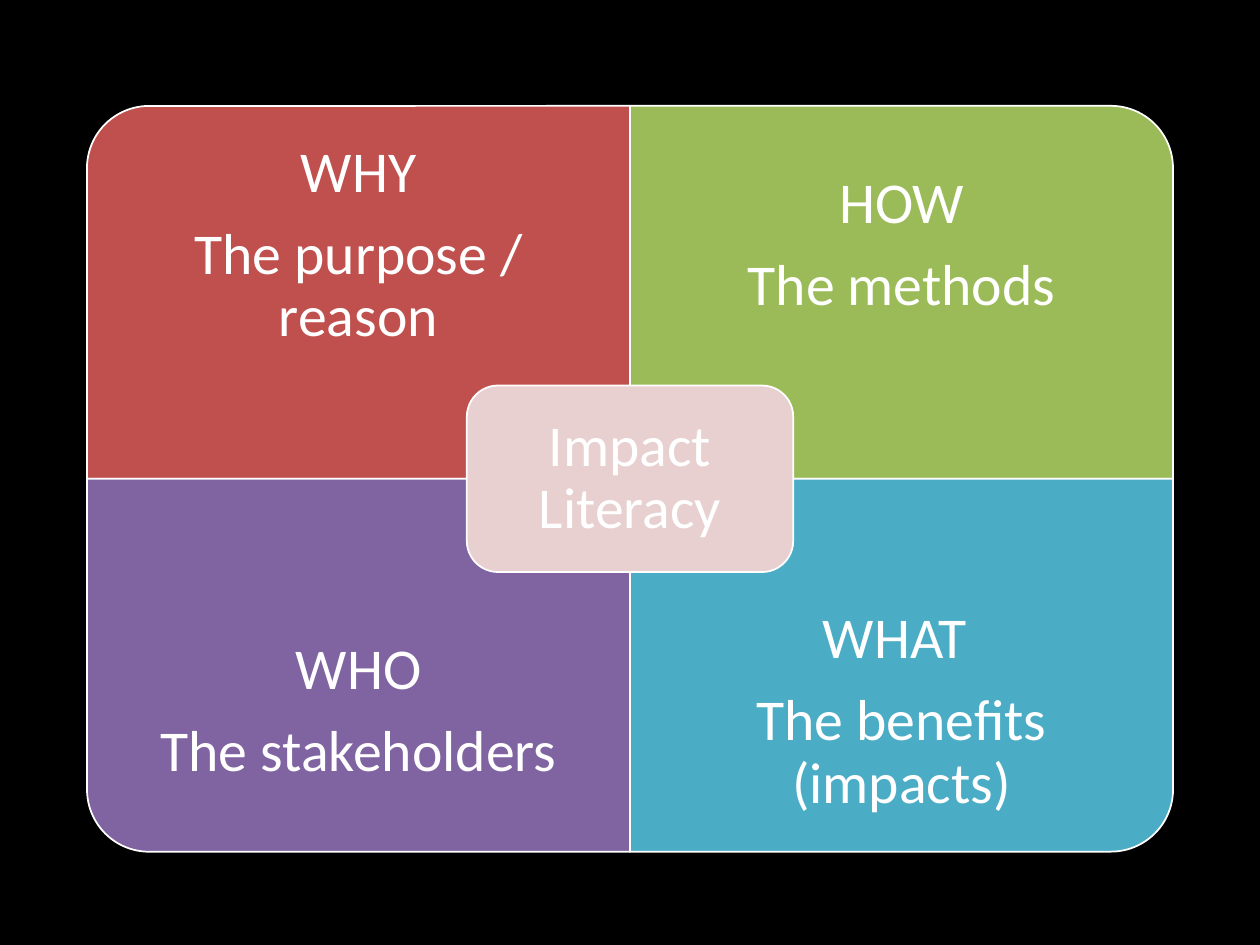
from dataclasses import dataclass

from pptx import Presentation
from pptx.dml.color import RGBColor
from pptx.enum.shapes import MSO_SHAPE as Preset
from pptx.enum.text import MSO_ANCHOR as Anchor, PP_ALIGN as Align
from pptx.util import Inches, Pt

WHITE = "FFFFFF"
CENTRE_X, CENTRE_Y = 5, 3.8
QUADRANT_WIDTH, QUADRANT_HEIGHT = 4.31, 2.96
TEXT_HEIGHT = 2.22
CORE_WIDTH, CORE_HEIGHT = 2.59, 1.48
CORE_PADDING = 0.07


@dataclass
class Quadrant:
    text: str
    colour: str
    column: int
    row: int
    rotation: int


QUADRANTS = [
    Quadrant("WHY\nThe purpose / reason", "C0504D", 0, 0, 270),
    Quadrant("HOW\nThe methods", "9BBB59", 1, 0, 0),
    Quadrant("WHO\nThe stakeholders", "8064A2", 0, 1, 180),
    Quadrant("WHAT \nThe benefits (impacts)", "4BACC6", 1, 1, 90),
]


def rgb(colour: str) -> RGBColor:
    return RGBColor.from_string(colour)


def add_panel(page, preset: Preset, left: float, top: float, width: float,
              height: float, colour: str, rotation: int = 0) -> None:
    """Draw a filled panel with a thin white outline."""
    panel = page.shapes.add_shape(
        preset, Inches(left), Inches(top), Inches(width), Inches(height))
    panel.rotation = rotation
    panel.shadow.inherit = False
    panel.fill.solid()
    panel.fill.fore_color.rgb = rgb(colour)
    panel.line.color.rgb = rgb(WHITE)
    panel.line.width = Pt(1)


def add_label(page, text: str, left: float, top: float, width: float,
              height: float, inset: float) -> None:
    """Write centred white text in an upright box."""
    box = page.shapes.add_textbox(
        Inches(left), Inches(top), Inches(width), Inches(height))
    frame = box.text_frame
    frame.word_wrap = True
    frame.vertical_anchor = Anchor.MIDDLE
    frame.margin_left = frame.margin_right = Inches(inset)
    frame.margin_top = frame.margin_bottom = Inches(inset)
    frame.text = text
    for para in frame.paragraphs:
        para.alignment = Align.CENTER
        para.line_spacing = 0.9
        para.space_after = Pt(11.5)
        for span in para.runs:
            span.font.name = "Calibri"
            span.font.size = Pt(33)
            span.font.color.rgb = rgb(WHITE)


def add_quadrant(page, quadrant: Quadrant) -> None:
    left = CENTRE_X + (quadrant.column - 1) * QUADRANT_WIDTH
    top = CENTRE_Y + (quadrant.row - 1) * QUADRANT_HEIGHT

    # A quarter turn swaps the sides about the same centre
    width, height = QUADRANT_WIDTH, QUADRANT_HEIGHT
    if quadrant.rotation % 180:
        width, height = height, width
    add_panel(page, Preset.ROUND_1_RECTANGLE,
              left + (QUADRANT_WIDTH - width) / 2,
              top + (QUADRANT_HEIGHT - height) / 2,
              width, height, quadrant.colour, quadrant.rotation)

    # Text keeps to the outer part, clear of the core
    text_top = top + quadrant.row * (QUADRANT_HEIGHT - TEXT_HEIGHT)
    add_label(page, quadrant.text, left, text_top,
              QUADRANT_WIDTH, TEXT_HEIGHT, 0.26)


def add_core(page, text: str) -> None:
    left, top = CENTRE_X - CORE_WIDTH / 2, CENTRE_Y - CORE_HEIGHT / 2
    add_panel(page, Preset.ROUNDED_RECTANGLE, left, top,
              CORE_WIDTH, CORE_HEIGHT, "E8D0D0")
    add_label(page, text, left + CORE_PADDING, top + CORE_PADDING,
              CORE_WIDTH - 2 * CORE_PADDING,
              CORE_HEIGHT - 2 * CORE_PADDING, 0.14)


def main() -> None:
    deck = Presentation()
    deck.slide_width, deck.slide_height = Inches(10), Inches(7.5)
    page = deck.slides.add_slide(deck.slide_layouts[6])

    # Background
    page.background.fill.solid()
    page.background.fill.fore_color.rgb = rgb("000000")

    # Four quadrants, then the core on top
    for quadrant in QUADRANTS:
        add_quadrant(page, quadrant)
    add_core(page, "Impact Literacy")

    deck.save("out.pptx")


if __name__ == "__main__":
    main()
